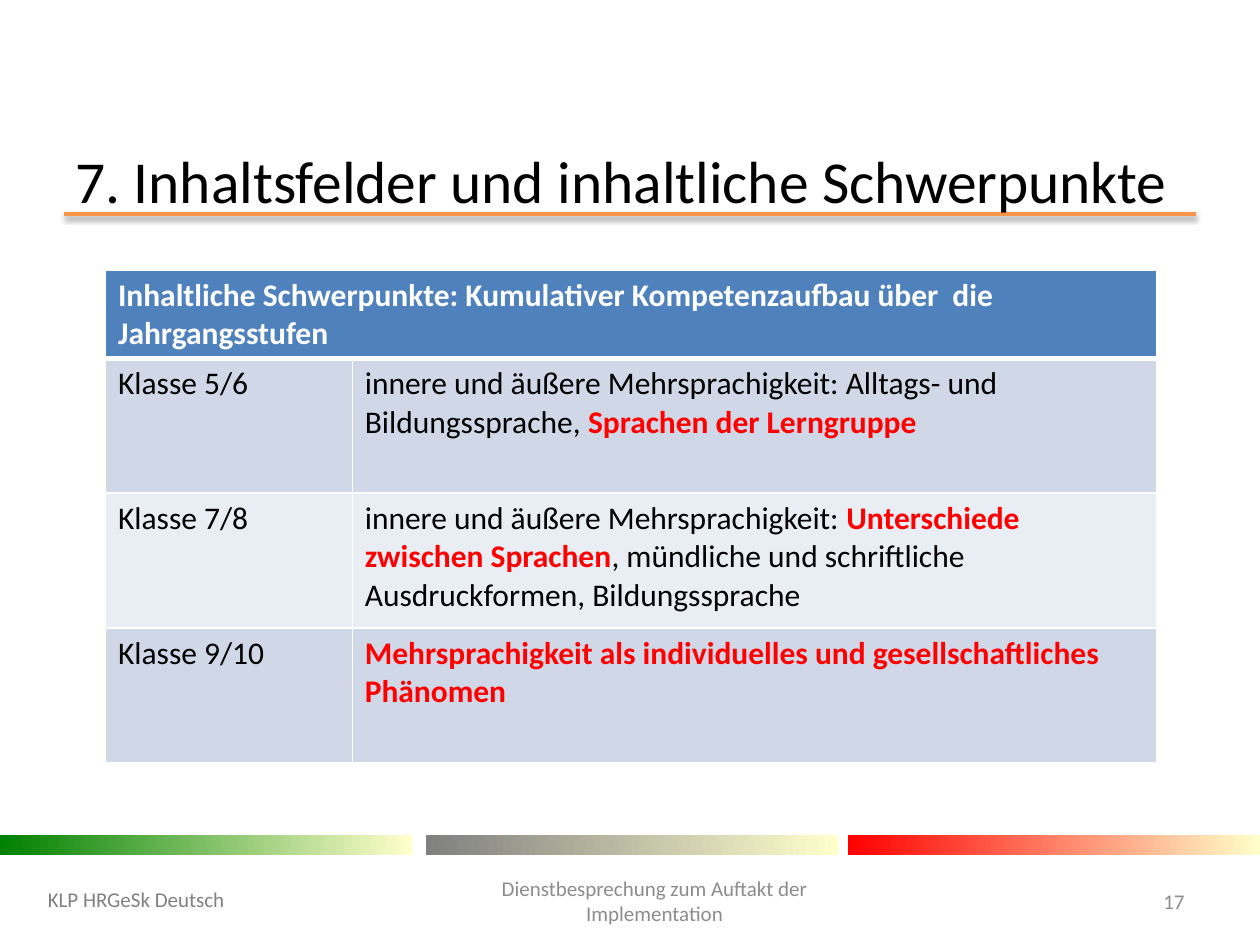
import lxml.etree
import pptx
import pptx.dml.color
import pptx.enum.shapes
import pptx.enum.text
import pptx.oxml
import pptx.oxml.ns
import pptx.util

Pt = pptx.util.Pt
RGB = pptx.dml.color.RGBColor.from_string
ALIGN = pptx.enum.text.PP_ALIGN
MIDDLE = pptx.enum.text.MSO_ANCHOR.MIDDLE
qn = pptx.oxml.ns.qn

THEME = {
    "font": "Calibri",
    "title_size": 34, "table_size": 18, "footer_size": 12,
    "text": "000000", "accent": "FF0000", "white": "FFFFFF",
    "rule": "F79646", "header": "4F81BD", "bands": ("D0D8E8", "E9EDF4"),
    "bar_end": "FFFFCC", "footer_dark": "808080", "footer": "8C8C8C",
}

TITLE = "7. Inhaltsfelder und inhaltliche Schwerpunkte"
HEADER = "Inhaltliche Schwerpunkte: Kumulativer Kompetenzaufbau über  die Jahrgangsstufen"
CLASSES = [
    ("Klasse 5/6", [
        ("innere und äußere Mehrsprachigkeit: Alltags- und Bildungssprache, ", False),
        ("Sprachen der Lerngruppe", True),
    ]),
    ("Klasse 7/8", [
        ("innere und äußere Mehrsprachigkeit: ", False),
        ("Unterschiede zwischen Sprachen", True),
        (", mündliche und schriftliche Ausdruckformen, Bildungssprache", False),
    ]),
    ("Klasse 9/10", [
        ("Mehrsprachigkeit als individuelles und gesellschaftliches Phänomen", True),
    ]),
]
FOOTERS = [
    ("KLP HRGeSk Deutsch", (20.2, 499.7, 238.3, 28.8), ALIGN.LEFT, "footer_dark"),
    ("Dienstbesprechung zum Auftakt der Implementation",
     (269.3, 488.9, 209.5, 51.1), ALIGN.CENTER, "footer"),
    ("17", (637.9, 500.4, 46.1, 28.8), ALIGN.RIGHT, "footer"),
]
BARS = [(0, "008000"), (243.4, "808080"), (484.6, "FF0000")]
BAR_TOP, BAR_WIDTH, BAR_HEIGHT = 477.2, 235.4, 11.5
RULE_LEFT, RULE_RIGHT, RULE_TOP = 36.7, 683.3, 122.4
TABLE_LEFT, TABLE_TOP = 60.3, 154.3
COLUMN_WIDTHS = (141, 459.5)
HEADER_HEIGHT, ROW_HEIGHT = 50.5, 77.1


def add_run(paragraph, text, size, color, bold=False):
    """Append one formatted run."""
    run = paragraph.add_run()
    run.text = text
    run.font.name = THEME["font"]
    run.font.size = Pt(size)
    run.font.bold = bold
    run.font.color.rgb = RGB(color)


def add_text(slide, text, box, size, color, alignment=ALIGN.LEFT):
    """Add a wrapped, vertically centred text box."""
    frame = slide.shapes.add_textbox(*map(Pt, box)).text_frame
    frame.word_wrap = True
    frame.vertical_anchor = MIDDLE
    frame.paragraphs[0].alignment = alignment
    add_run(frame.paragraphs[0], text, size, color)


def add_rule(slide):
    """Draw the line below the title with its soft shadow."""
    rule = slide.shapes.add_connector(
        pptx.enum.shapes.MSO_CONNECTOR.STRAIGHT,
        Pt(RULE_LEFT), Pt(RULE_TOP), Pt(RULE_RIGHT), Pt(RULE_TOP))
    rule.line.color.rgb = RGB(THEME["rule"])
    rule.line.width = Pt(2)
    effects = lxml.etree.SubElement(rule._element.spPr, qn("a:effectLst"))
    shadow = lxml.etree.SubElement(
        effects, qn("a:outerShdw"), blurRad=str(Pt(3.1)), dist=str(Pt(1.6)),
        dir="5400000", rotWithShape="0")
    color = lxml.etree.SubElement(shadow, qn("a:srgbClr"), val=THEME["text"])
    lxml.etree.SubElement(color, qn("a:alpha"), val="38000")


def add_bar(slide, left, color):
    """Draw one gradient bar above the footer."""
    bar = slide.shapes.add_shape(
        pptx.enum.shapes.MSO_SHAPE.RECTANGLE,
        Pt(left), Pt(BAR_TOP), Pt(BAR_WIDTH), Pt(BAR_HEIGHT))
    bar.shadow.inherit = False
    bar.line.fill.background()
    bar.fill.gradient()
    bar.fill.gradient_angle = 0
    for stop, stop_color in zip(bar.fill.gradient_stops, (color, THEME["bar_end"])):
        stop.color.rgb = RGB(stop_color)


def style_cell(cell, fill, bottom_width=1):
    """Fill a cell and give it white borders."""
    cell.fill.solid()
    cell.fill.fore_color.rgb = RGB(fill)
    properties = cell._tc.get_or_add_tcPr()
    widths = {"lnL": 1, "lnR": 1, "lnT": 1, "lnB": bottom_width}
    for index, (side, width) in enumerate(widths.items()):
        border = lxml.etree.Element(qn(f"a:{side}"), w=str(Pt(width)))
        solid = lxml.etree.SubElement(border, qn("a:solidFill"))
        lxml.etree.SubElement(solid, qn("a:srgbClr"), val=THEME["white"])
        properties.insert(index, border)


def add_focus_table(slide):
    """Build the table of content focuses by class."""
    heights = [HEADER_HEIGHT] + [ROW_HEIGHT] * len(CLASSES)
    table = slide.shapes.add_table(
        len(heights), len(COLUMN_WIDTHS), Pt(TABLE_LEFT), Pt(TABLE_TOP),
        Pt(sum(COLUMN_WIDTHS)), Pt(sum(heights))).table
    for column, width in zip(table.columns, COLUMN_WIDTHS):
        column.width = Pt(width)
    for row, height in zip(table.rows, heights):
        row.height = Pt(height)
    size = THEME["table_size"]
    table.cell(0, 0).merge(table.cell(0, 1))
    for cell in table.rows[0].cells:
        style_cell(cell, THEME["header"], 3)
    add_run(table.cell(0, 0).text_frame.paragraphs[0], HEADER, size, THEME["white"], True)
    for index, (label, focus) in enumerate(CLASSES):
        cells = table.rows[index + 1].cells
        for cell, runs in zip(cells, ([(label, False)], focus)):
            style_cell(cell, THEME["bands"][index % 2])
            for text, stressed in runs:
                color = THEME["accent" if stressed else "text"]
                add_run(cell.text_frame.paragraphs[0], text, size, color, stressed)


def main():
    """Build and save the slide."""
    presentation = pptx.Presentation()
    presentation.slide_width, presentation.slide_height = Pt(720), Pt(540)
    slide = presentation.slides.add_slide(presentation.slide_layouts[6])
    add_rule(slide)
    for left, color in BARS:
        add_bar(slide, left, color)
    add_text(slide, TITLE, (36, 88.6, 648, 28.1), THEME["title_size"], THEME["text"])
    for text, box, alignment, color in FOOTERS:
        add_text(slide, text, box, THEME["footer_size"], THEME[color], alignment)
    add_focus_table(slide)
    presentation.save("out.pptx")


if __name__ == "__main__":
    main()
